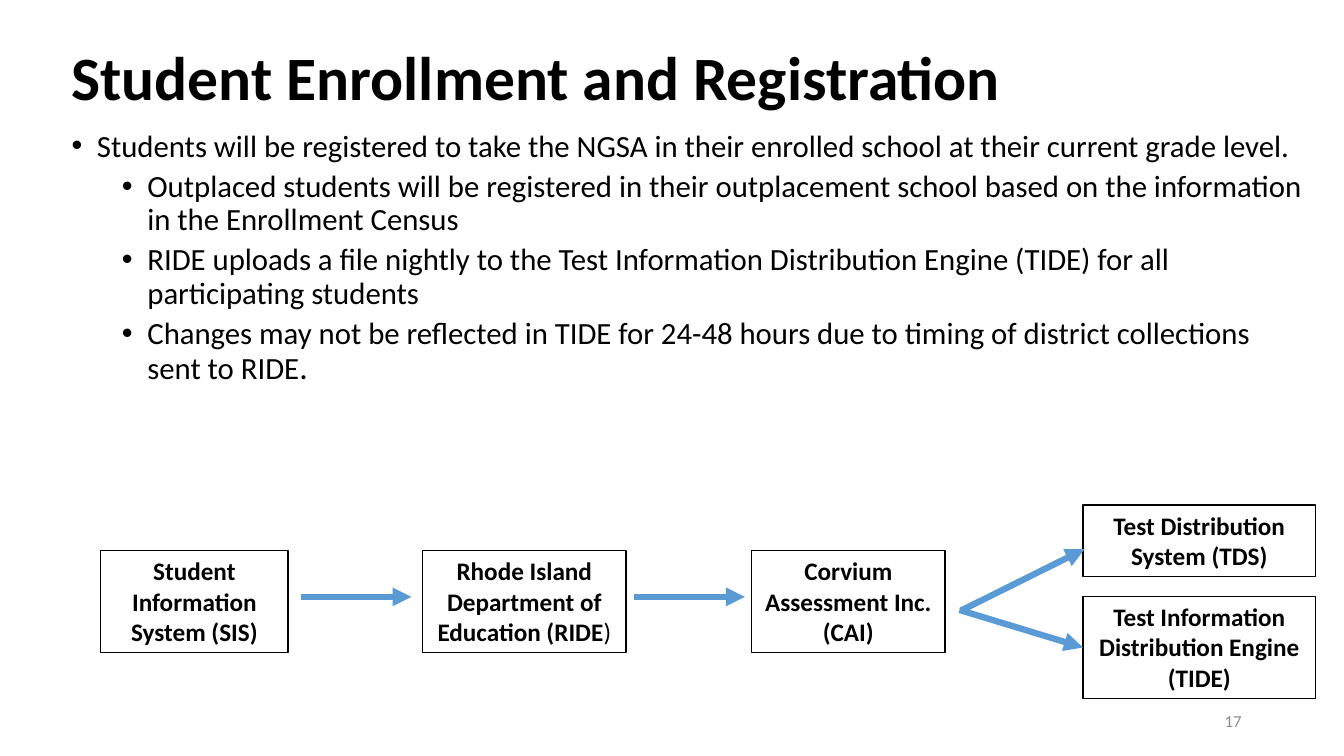
"""Build the slide on student enrollment and registration."""
from dataclasses import dataclass
from typing import Optional

from lxml.etree import SubElement
from pptx import Presentation
from pptx.dml.color import RGBColor
from pptx.enum.shapes import MSO_CONNECTOR as Connector, MSO_SHAPE as Shape
from pptx.enum.text import MSO_ANCHOR as Anchor, MSO_AUTO_SIZE as AutoSize, PP_ALIGN as Align
from pptx.oxml.ns import qn
from pptx.util import Cm, Pt


@dataclass(frozen=True)
class Theme:
    font: str = "Calibri"
    ink: RGBColor = RGBColor(0, 0, 0)
    muted: RGBColor = RGBColor(0x8C, 0x8C, 0x8C)
    accent: RGBColor = RGBColor(0x5B, 0x9B, 0xD5)
    title: int = 44
    body: int = 22
    stop: int = 24
    label: int = 18
    number: int = 12
    outline: float = 1
    arrow: float = 4.5


@dataclass(frozen=True)
class Frame:
    left: float
    top: float
    width: float
    height: float

    def lengths(self) -> list[Cm]:
        return [Cm(value) for value in (self.left, self.top, self.width, self.height)]


@dataclass(frozen=True)
class Step:
    key: str
    text: str
    frame: Frame
    plain_ending: str = ""


@dataclass(frozen=True)
class Arrow:
    start: tuple[float, float]
    end: tuple[float, float]
    target: Optional[str] = None


@dataclass(frozen=True)
class Bullet:
    text: str
    level: int = 1
    ending: str = ""


THEME = Theme()
FLOW_MIDDLE = 15.04
TITLE_FRAME = Frame(1.55, 0.89, 30, 2.29)
BODY_FRAME = Frame(1.55, 3.16, 31.65, 14.5)
NUMBER_FRAME = Frame(23.92, 17.65, 7.62, 1.02)

BULLETS = [
    Bullet("Students will be registered to take the NGSA in their enrolled school "
           "at their current grade level.", level=0),
    Bullet("Outplaced students will be registered in their outplacement school "
           "based on the information in the Enrollment Census"),
    Bullet("RIDE uploads a file nightly to the Test Information Distribution Engine "
           "(TIDE) for all participating students"),
    Bullet("Changes may not be reflected in TIDE for 24-48 hours due to timing of "
           "district collections sent to RIDE", ending="."),
]
STEPS = [
    Step("SIS", "Student Information System (SIS)", Frame(2.54, 13.88, 4.72, 2.57)),
    Step("RIDE", "Rhode Island Department of Education (RIDE",
         Frame(10.65, 13.88, 5.13, 2.57), plain_ending=")"),
    Step("CAI", "Corvium Assessment Inc. (CAI)", Frame(18.94, 13.88, 4.88, 2.57)),
    Step("TDS", "Test Distribution System (TDS)", Frame(27.29, 12.73, 5.87, 1.8)),
    Step("TIDE", "Test Information Distribution Engine (TIDE)",
         Frame(27.29, 15.03, 5.87, 2.57)),
]
ARROWS = [
    Arrow((7.58, FLOW_MIDDLE), (10.37, FLOW_MIDDLE)),
    Arrow((15.98, FLOW_MIDDLE), (18.77, FLOW_MIDDLE)),
    Arrow((24.21, 15.39), (27.33, 13.84)),
    Arrow((24.18, 15.37), (27.29, 16.31), target="TIDE"),
]


def place(shape, frame: Frame) -> None:
    shape.left, shape.top, shape.width, shape.height = frame.lengths()


def write(para, text: str, *, size: float, color: RGBColor = THEME.ink,
          bold: bool = False, align: Optional[Align] = None) -> None:
    if align is not None:
        para.alignment = align
    span = para.add_run()
    span.text = text
    span.font.name = THEME.font
    span.font.size = Pt(size)
    span.font.bold = bold
    span.font.color.rgb = color


def add_title(page) -> None:
    title = page.shapes.title
    place(title, TITLE_FRAME)
    title.text_frame.vertical_anchor = Anchor.MIDDLE
    para = title.text_frame.paragraphs[0]
    para.line_spacing = 0.9
    write(para, "Student Enrollment and Registration",
          size=THEME.title, bold=True, align=Align.LEFT)


def add_bullets(page) -> None:
    body = page.placeholders[1]
    place(body, BODY_FRAME)
    body.text_frame.auto_size = AutoSize.NONE
    for index, bullet in enumerate(BULLETS):
        para = body.text_frame.add_paragraph() if index else body.text_frame.paragraphs[0]
        para.level = bullet.level
        para.line_spacing = 0.9
        para.space_before = Pt(5 if index else 0)
        properties = para._p.get_or_add_pPr()
        properties.set("marL", str(Cm(0.64 + 1.27 * bullet.level)))
        properties.set("indent", str(-Cm(0.64)))
        SubElement(properties, qn("a:buFont"), typeface="Arial")
        SubElement(properties, qn("a:buChar"), char="•")
        write(para, bullet.text, size=THEME.body)
        if bullet.ending:
            write(para, bullet.ending, size=THEME.stop)


def add_step(page, step: Step):
    box = page.shapes.add_shape(Shape.RECTANGLE, *step.frame.lengths())
    box.shadow.inherit = False
    box.fill.background()
    box.line.color.rgb = THEME.ink
    box.line.width = Pt(THEME.outline)
    box.text_frame.word_wrap = True
    box.text_frame.auto_size = AutoSize.SHAPE_TO_FIT_TEXT
    box.text_frame.vertical_anchor = Anchor.TOP
    para = box.text_frame.paragraphs[0]
    write(para, step.text, size=THEME.label, bold=True, align=Align.CENTER)
    if step.plain_ending:
        write(para, step.plain_ending, size=THEME.label)
    return box


def add_arrow(page, arrow: Arrow, boxes: dict) -> None:
    ends = [Cm(value) for value in (*arrow.start, *arrow.end)]
    line = page.shapes.add_connector(Connector.STRAIGHT, *ends)
    if arrow.target:
        line.end_connect(boxes[arrow.target], 1)
    line.line.color.rgb = THEME.accent
    line.line.width = Pt(THEME.arrow)
    properties = line._element.spPr
    SubElement(properties.find(qn("a:ln")), qn("a:tailEnd"), type="triangle")
    SubElement(properties, qn("a:effectLst"))


def add_page_number(page) -> None:
    box = page.shapes.add_textbox(*NUMBER_FRAME.lengths())
    box.text_frame.word_wrap = True
    box.text_frame.vertical_anchor = Anchor.MIDDLE
    write(box.text_frame.paragraphs[0], "17", size=THEME.number,
          color=THEME.muted, align=Align.RIGHT)


def main() -> None:
    deck = Presentation()
    deck.slide_width, deck.slide_height = Cm(33.87), Cm(19.05)
    page = deck.slides.add_slide(deck.slide_layouts[1])
    add_title(page)
    add_bullets(page)
    add_page_number(page)
    boxes = {step.key: add_step(page, step) for step in STEPS}
    for arrow in ARROWS:
        add_arrow(page, arrow, boxes)
    deck.save("out.pptx")


if __name__ == "__main__":
    main()
